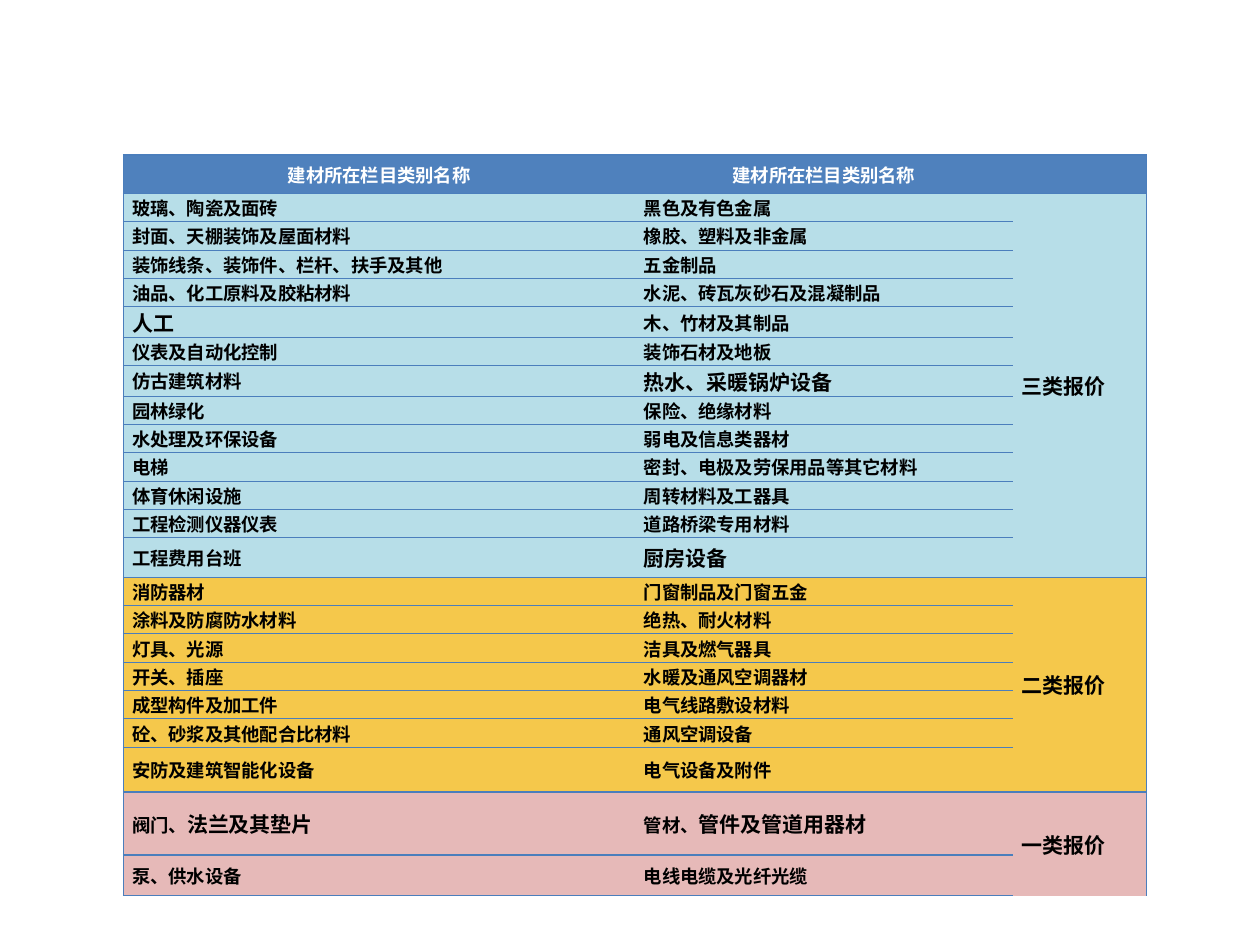
from lxml import etree
from pptx import Presentation
from pptx import util as u
from pptx.dml.color import RGBColor
from pptx.enum import text
from pptx.oxml.ns import qn

FONT = "Noto Sans CJK SC"
WHITE = RGBColor(0xFF, 0xFF, 0xFF)
BLACK = RGBColor(0, 0, 0)
HEAD = RGBColor(0x4F, 0x81, 0xBD)
LINE = RGBColor(0x4B, 0x7E, 0xBC)
BLUE = RGBColor(0xB7, 0xDE, 0xE8)
GOLD = RGBColor(0xF5, 0xC8, 0x4B)
PINK = RGBColor(0xE6, 0xB9, 0xB8)
SMALL, LARGE = 10.5, 12
ROW = 16.2
COLS = (4.06, 3, 1.06)
TITLE = "建材所在栏目类别名称"
TALL = {0: 19.6, 13: 22.6, 20: 25.6, 21: 36, 22: 23.3}
BIG = {"人工", "热水、采暖锅炉设备", "厨房设备", "法兰及其垫片", "管件及管道用器材"}
GROUPS = [
    ("三类报价", BLUE, [
        ("玻璃、陶瓷及面砖", "黑色及有色金属"),
        ("封面、天棚装饰及屋面材料", "橡胶、塑料及非金属"),
        ("装饰线条、装饰件、栏杆、扶手及其他", "五金制品"),
        ("油品、化工原料及胶粘材料", "水泥、砖瓦灰砂石及混凝制品"),
        ("人工", "木、竹材及其制品"),
        ("仪表及自动化控制", "装饰石材及地板"),
        ("仿古建筑材料", "热水、采暖锅炉设备"),
        ("园林绿化", "保险、绝缘材料"),
        ("水处理及环保设备", "弱电及信息类器材"),
        ("电梯", "密封、电极及劳保用品等其它材料"),
        ("体育休闲设施", "周转材料及工器具"),
        ("工程检测仪器仪表", "道路桥梁专用材料"),
        ("工程费用台班", "厨房设备"),
    ]),
    ("二类报价", GOLD, [
        ("消防器材", "门窗制品及门窗五金"),
        ("涂料及防腐防水材料", "绝热、耐火材料"),
        ("灯具、光源", "洁具及燃气器具"),
        ("开关、插座", "水暖及通风空调器材"),
        ("成型构件及加工件", "电气线路敷设材料"),
        ("砼、砂浆及其他配合比材料", "通风空调设备"),
        ("安防及建筑智能化设备", "电气设备及附件"),
    ]),
    ("一类报价", PINK, [
        ("阀门、|法兰及其垫片", "管材、|管件及管道用器材"),
        ("泵、供水设备", "电线电缆及光纤光缆"),
    ]),
]


def edge(cell, sides):
    """Draw the given sides of a cell and clear the others."""
    props = cell._tc.get_or_add_tcPr()
    for side in "LRTB":
        line = etree.SubElement(props, qn("a:ln" + side), w=str(u.Pt(0.75)))
        if side in sides:
            fill = etree.SubElement(line, qn("a:solidFill"))
            etree.SubElement(fill, qn("a:srgbClr"), val=str(LINE))
        else:
            etree.SubElement(line, qn("a:noFill"))


def paint(cell, fill, sides):
    """Give a cell its borders, fill and margins."""
    edge(cell, sides)
    cell.fill.solid()
    cell.fill.fore_color.rgb = fill
    cell.margin_left = cell.margin_right = u.Inches(0.07)
    cell.margin_top = cell.margin_bottom = 0
    cell.vertical_anchor = text.MSO_ANCHOR.MIDDLE


def write(cell, words, size=SMALL, color=BLACK, align=text.PP_ALIGN.LEFT):
    """Write bold runs, split at bars, into a cell."""
    para = cell.text_frame.paragraphs[0]
    para.alignment = align
    for part in words.split("|"):
        run = para.add_run()
        run.text = part
        font = run.font
        font.name, font.bold = FONT, True
        font.size = u.Pt(LARGE if part in BIG else size)
        font.color.rgb = color
        etree.SubElement(run._r.get_or_add_rPr(), qn("a:ea"), typeface=FONT)


def sides_at(col, first, last):
    """Name the visible sides of a cell from its column and group ends."""
    sides = {0: "L", 1: "", 2: "R"}[col]
    return sides + "T" * (col < 2 or first) + "B" * (col < 2 or last)


def fill_head(grid):
    """Fill the header row."""
    for col in range(len(COLS)):
        cell = grid.cell(0, col)
        paint(cell, HEAD, sides_at(col, True, True))
        if col < 2:
            write(cell, TITLE, color=WHITE, align=text.PP_ALIGN.CENTER)


def fill_group(grid, top, name, color, pairs):
    """Fill one price group and return the row after it."""
    end = top + len(pairs)
    for row, pair in enumerate(pairs, top):
        for col in range(len(COLS)):
            paint(grid.cell(row, col), color,
                  sides_at(col, row == top, row == end - 1))
        for col, words in enumerate(pair):
            write(grid.cell(row, col), words)
    label = grid.cell(top, 2)
    label.merge(grid.cell(end - 1, 2))
    write(label, name, LARGE)
    return end


def add_prices(slide, left, top, wide):
    """Place the price table in the given box."""
    count = 1 + sum(len(pairs) for _, _, pairs in GROUPS)
    tall = [u.Pt(TALL.get(row, ROW)) for row in range(count)]
    grid = slide.shapes.add_table(
        count, len(COLS), left, top, wide, sum(tall)).table
    grid.horz_banding = False
    for col, share in zip(grid.columns, COLS):
        col.width = int(wide * share / sum(COLS))
    for row, height in zip(grid.rows, tall):
        row.height = height
    fill_head(grid)
    row = 1
    for name, color, pairs in GROUPS:
        row = fill_group(grid, row, name, color, pairs)


def main():
    """Build and save the slide."""
    deck = Presentation()
    deck.slide_width, deck.slide_height = u.Inches(10), u.Inches(7.5)
    slide = deck.slides.add_slide(deck.slide_layouts[6])
    add_prices(slide, u.Inches(0.98), u.Inches(1.23), u.Inches(sum(COLS)))
    deck.save("out.pptx")


if __name__ == "__main__":
    main()
